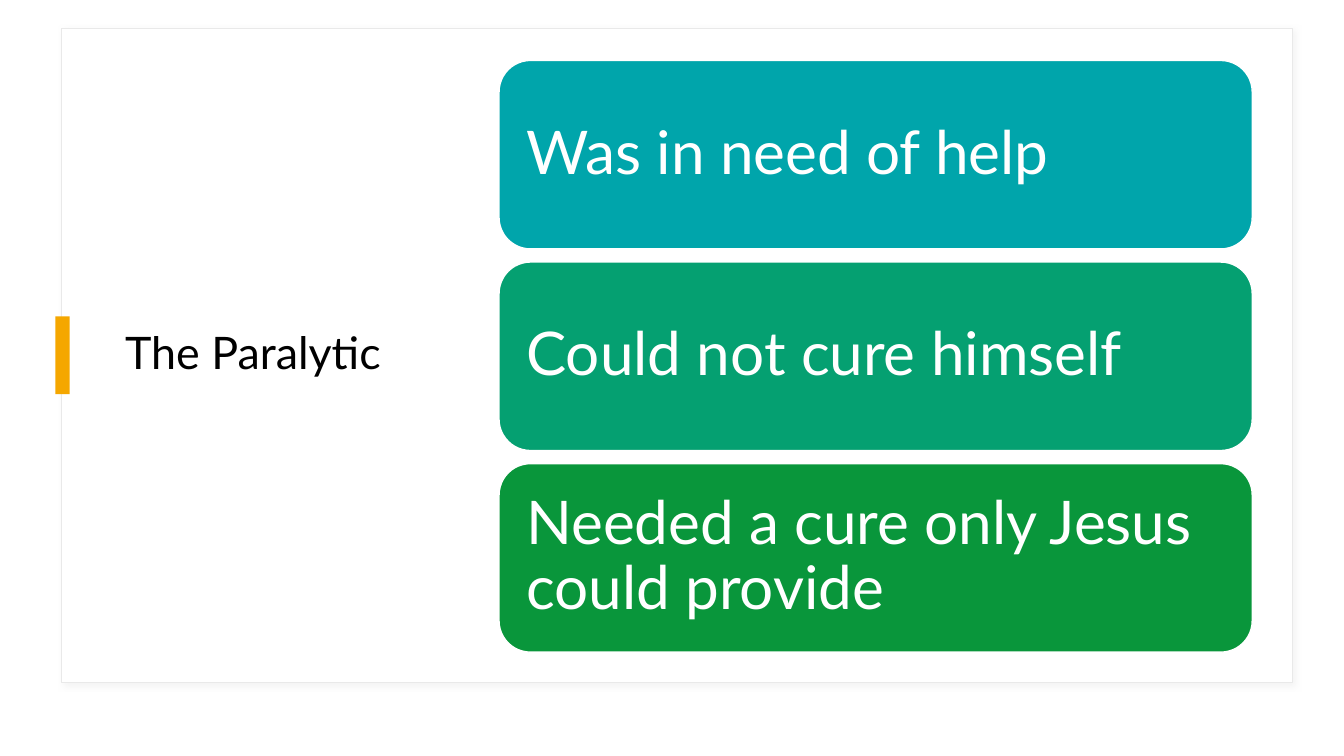
from lxml.etree import fromstring
from pptx import Presentation
from pptx.dml.color import RGBColor
from pptx.enum.shapes import MSO_SHAPE
from pptx.enum.text import MSO_ANCHOR, MSO_AUTO_SIZE, PP_ALIGN
from pptx.util import Inches, Pt

TITLE = "The Paralytic"
POINTS = [
    ("Was in need of help", "00A5AB"),
    ("Could not cure himself", "05A071"),
    ("Needed a cure only Jesus could provide", "09963B"),
]
FONT = "Lato"
WIDTH, HEIGHT = 13.33, 7.5
FRAME = (0.61, 0.28, 12.21, 6.49)
TITLE_AREA = (1.14, 0.55, 3.27, 5.95)
MARKER = (0.55, 3.14, 0.14, 0.77)
CARD_LEFT, CARD_TOP, CARD_WIDTH, CARD_HEIGHT = 4.95, 0.6, 7.47, 1.87
ROW_STEP = 2.0
CARD_INSET = 0.18
SOFT_SHADOW = (
    '<a:effectLst xmlns:a="http://schemas.openxmlformats.org/drawingml/2006/main">'
    '<a:outerShdw blurRad="50800" dist="38100" dir="2700000" algn="tl" rotWithShape="0">'
    '<a:srgbClr val="D9D9D9"><a:alpha val="30000"/></a:srgbClr>'
    "</a:outerShdw></a:effectLst>"
)


def colour(value):
    return RGBColor.from_string(value)


def add_block(page, kind, area, fill, line=None):
    block = page.shapes.add_shape(kind, *map(Inches, area))
    block.shadow.inherit = False
    block.fill.solid()
    block.fill.fore_color.rgb = colour(fill)
    if line:
        block.line.color.rgb = colour(line)
        block.line.width = Pt(1)
    else:
        block.line.fill.background()
    return block


def write(box, text, size, ink):
    frame = box.text_frame
    frame.text = text
    frame.word_wrap = True
    frame.auto_size = MSO_AUTO_SIZE.NONE
    frame.vertical_anchor = MSO_ANCHOR.MIDDLE
    para = frame.paragraphs[0]
    para.alignment = PP_ALIGN.LEFT
    para.line_spacing = 0.9
    font = para.runs[0].font
    font.name, font.size = FONT, Pt(size)
    font.color.rgb = colour(ink)
    return frame


def add_frame(page):
    panel = add_block(page, MSO_SHAPE.RECTANGLE, FRAME, "FFFFFF", "E9E9E9")
    properties = panel.element.spPr
    properties.replace(properties.find("{*}effectLst"), fromstring(SOFT_SHADOW))
    page.shapes.title.element.addprevious(panel.element)


def add_title(page):
    title = page.shapes.title
    title.left, title.top, title.width, title.height = map(Inches, TITLE_AREA)
    write(title, TITLE, 32, "000000")
    add_block(page, MSO_SHAPE.RECTANGLE, MARKER, "F5A700")


def add_cards(page):
    for row, (text, fill) in enumerate(POINTS):
        area = (CARD_LEFT, CARD_TOP + row * ROW_STEP, CARD_WIDTH, CARD_HEIGHT)
        card = add_block(page, MSO_SHAPE.ROUNDED_RECTANGLE, area, fill, "FFFFFF")
        frame = write(card, text, 43, "FFFFFF")
        frame.margin_left = frame.margin_right = Inches(CARD_INSET)
        frame.margin_top = frame.margin_bottom = Inches(CARD_INSET)


def main():
    """Build the slide with its title and three stacked points."""
    deck = Presentation()
    deck.slide_width, deck.slide_height = Inches(WIDTH), Inches(HEIGHT)
    page = deck.slides.add_slide(deck.slide_layouts[5])
    add_frame(page)
    add_title(page)
    add_cards(page)
    deck.save("out.pptx")


if __name__ == "__main__":
    main()
